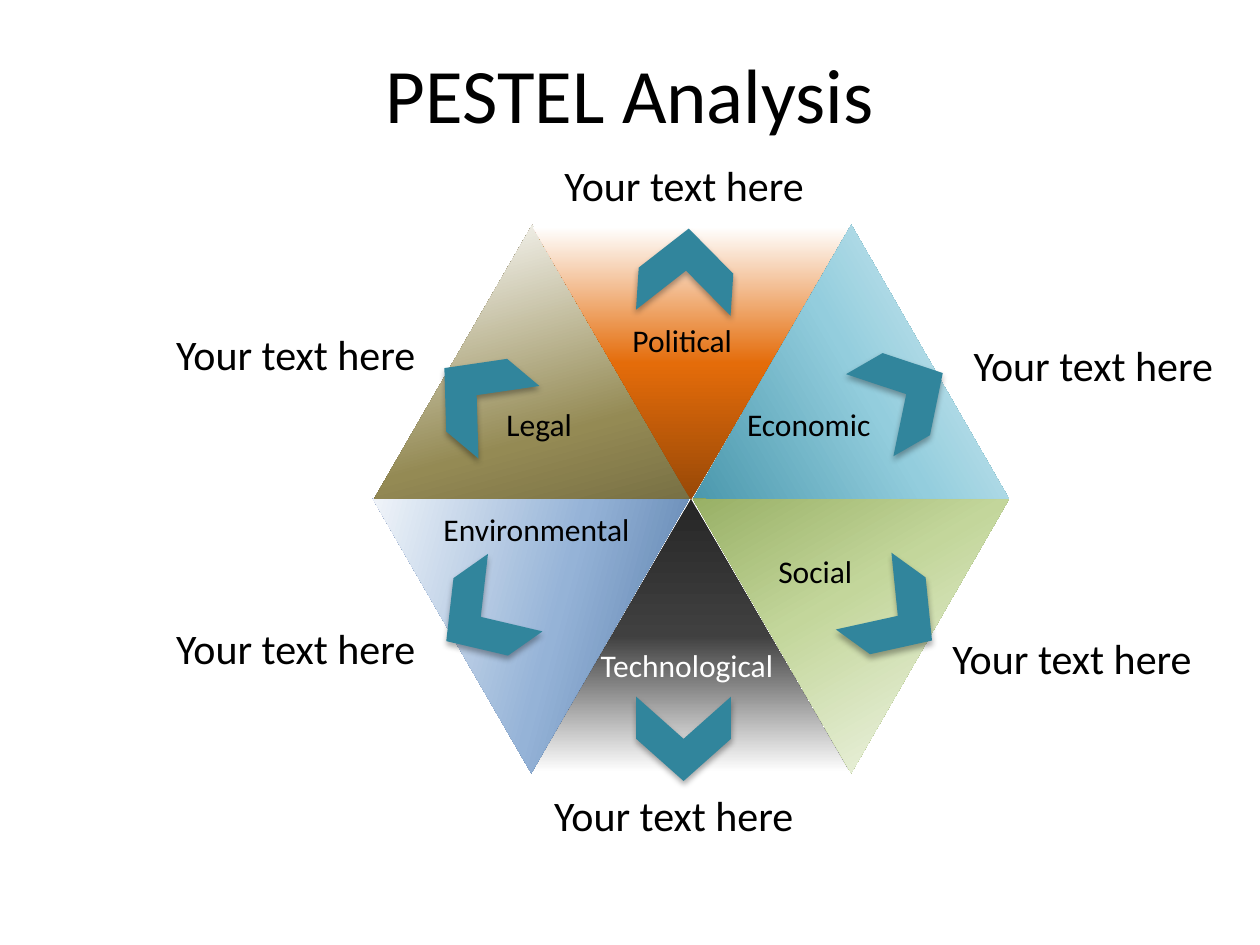
from copy import deepcopy
from dataclasses import dataclass

from pptx import Presentation
from pptx.dml.color import RGBColor
from pptx.enum.shapes import MSO_SHAPE
from pptx.enum.text import MSO_ANCHOR, MSO_AUTO_SIZE, PP_ALIGN
from pptx.oxml import parse_xml
from pptx.oxml.ns import nsdecls, qn
from pptx.shapes.autoshape import Shape
from pptx.shapes.shapetree import GroupShapes, SlideShapes
from pptx.text.text import _Paragraph
from pptx.util import Cm, Pt

FONT = "Calibri"
BLACK = RGBColor(0x00, 0x00, 0x00)
WHITE = RGBColor(0xFF, 0xFF, 0xFF)
TEAL = RGBColor(0x31, 0x85, 0x9C)
CHARCOAL = RGBColor(0x26, 0x26, 0x26)
GREY = RGBColor(0x40, 0x40, 0x40)
DARK_BLUE = RGBColor(0x37, 0x60, 0x92)
LIGHT_BLUE = RGBColor(0x95, 0xB3, 0xD7)
DARK_TAN = RGBColor(0x4A, 0x45, 0x2A)
TAN = RGBColor(0x94, 0x8A, 0x54)
BROWN = RGBColor(0x98, 0x48, 0x07)
ORANGE = RGBColor(0xE4, 0x6C, 0x0A)
AQUA = RGBColor(0x93, 0xCD, 0xDD)
DARK_GREEN = RGBColor(0x77, 0x93, 0x3C)
LIGHT_GREEN = RGBColor(0xC3, 0xD6, 0x9B)

TRIANGLE_SIZE = (6.38, 5.51)
CHEVRON_SIZE = (1.7, 1.91)
CAPTION_SIZE = (5.38, 1.27)
LABEL_HEIGHT = 1.02
CAPTION_TEXT = "Your text here"


@dataclass(frozen=True)
class Triangle:
    left: float
    top: float
    rotation: float
    dark: RGBColor
    middle: RGBColor
    angle: float
    flipped: bool = False


@dataclass(frozen=True)
class Chevron:
    left: float
    top: float
    rotation: float


@dataclass(frozen=True)
class TextItem:
    text: str
    left: float
    top: float
    width: float
    height: float
    size: float
    color: RGBColor = BLACK


TRIANGLES = [
    Triangle(10.74, 10.06, 0, CHARCOAL, GREY, 90),
    Triangle(8.31, 8.69, 60, DARK_BLUE, LIGHT_BLUE, 135),
    Triangle(8.33, 5.92, 120, DARK_TAN, TAN, 135),
    Triangle(10.74, 4.57, 0, BROWN, ORANGE, 90, flipped=True),
    Triangle(14.76, 5.92, 120, TEAL, AQUA, 210),
    Triangle(14.76, 8.69, 60, DARK_GREEN, LIGHT_GREEN, 0),
]

CHEVRONS = [
    Chevron(17.42, 6.99, 330),
    Chevron(8.76, 7.01, 220),
    Chevron(8.84, 11.48, 144.9),
    Chevron(12.93, 13.94, 90),
    Chevron(17.25, 11.46, 35.9),
    Chevron(12.98, 4.5, 273.7),
]

CAPTION_POSITIONS = [
    (11.13, 3.1),
    (19.38, 6.71),
    (18.95, 12.62),
    (10.92, 15.8),
    (3.3, 12.42),
    (3.3, 6.5),
]

LABELS = [
    TextItem("Political", 12.5, 6.35, 2.54, LABEL_HEIGHT, 18),
    TextItem("Economic", 14.81, 8.05, 3.02, LABEL_HEIGHT, 18),
    TextItem("Social", 15.44, 11, 2.01, LABEL_HEIGHT, 18),
    TextItem("Technological", 11.86, 12.9, 4.04, LABEL_HEIGHT, 18, WHITE),
    TextItem("Environmental", 8.69, 10.16, 4.29, LABEL_HEIGHT, 18),
    TextItem("Legal", 9.96, 8.05, 1.85, LABEL_HEIGHT, 18),
]


def add_run(paragraph: _Paragraph, text: str, size: float, color: RGBColor) -> None:
    run = paragraph.add_run()
    run.text = text
    run.font.name = FONT
    run.font.size = Pt(size)
    run.font.color.rgb = color


def fill_gradient(shape: Shape, colors: list[RGBColor], angle: float) -> None:
    shape.fill.gradient()
    stop_list = shape._element.spPr.find(qn("a:gradFill")).find(qn("a:gsLst"))
    stop_list.append(deepcopy(stop_list[0]))
    for stop, color, position in zip(shape.fill.gradient_stops, colors, (0, 0.5, 1)):
        stop.color.rgb = color
        stop.position = position
    shape.fill.gradient_angle = (360 - angle) % 360


def add_triangle(shapes: GroupShapes, triangle: Triangle) -> None:
    width, height = TRIANGLE_SIZE
    shape = shapes.add_shape(
        MSO_SHAPE.ISOSCELES_TRIANGLE,
        Cm(triangle.left), Cm(triangle.top), Cm(width), Cm(height),
    )
    shape.rotation = triangle.rotation
    if triangle.flipped:
        shape._element.spPr.xfrm.set("flipV", "1")
    fill_gradient(shape, [triangle.dark, triangle.middle, WHITE], triangle.angle)
    shape.line.fill.background()
    shape.shadow.inherit = False


def add_chevron(shapes: SlideShapes, chevron: Chevron) -> None:
    width, height = CHEVRON_SIZE
    shape = shapes.add_shape(
        MSO_SHAPE.CHEVRON,
        Cm(chevron.left), Cm(chevron.top), Cm(width), Cm(height),
    )
    shape.rotation = chevron.rotation
    shape.fill.solid()
    shape.fill.fore_color.rgb = TEAL
    shape.line.fill.background()
    shape.shadow.inherit = False
    effects = shape._element.spPr.find(qn("a:effectLst"))
    effects.append(parse_xml(
        f'<a:outerShdw {nsdecls("a")} blurRad="{Pt(3.5)}" dist="{Pt(2.2)}" '
        'dir="5400000" algn="ctr" rotWithShape="0">'
        '<a:srgbClr val="000000"><a:alpha val="32000"/></a:srgbClr></a:outerShdw>'
    ))


def add_text(shapes: SlideShapes, item: TextItem) -> None:
    box = shapes.add_textbox(
        Cm(item.left), Cm(item.top), Cm(item.width), Cm(item.height)
    )
    box.text_frame.word_wrap = False
    box.text_frame.auto_size = MSO_AUTO_SIZE.SHAPE_TO_FIT_TEXT
    add_run(box.text_frame.paragraphs[0], item.text, item.size, item.color)


def format_title(title: Shape, text: str) -> None:
    title.left, title.top = Cm(1.27), Cm(0.76)
    title.width, title.height = Cm(22.86), Cm(2.21)
    title.text_frame.vertical_anchor = MSO_ANCHOR.MIDDLE
    paragraph = title.text_frame.paragraphs[0]
    paragraph.alignment = PP_ALIGN.CENTER
    add_run(paragraph, text, 44, BLACK)


def main() -> None:
    presentation = Presentation()
    presentation.slide_width, presentation.slide_height = Cm(25.4), Cm(19.05)
    slide = presentation.slides.add_slide(presentation.slide_layouts[5])
    format_title(slide.shapes.title, "PESTEL Analysis")

    hexagon = slide.shapes.add_group_shape()
    for triangle in TRIANGLES:
        add_triangle(hexagon.shapes, triangle)
    for chevron in CHEVRONS:
        add_chevron(slide.shapes, chevron)
    captions = [
        TextItem(CAPTION_TEXT, left, top, *CAPTION_SIZE, 24)
        for left, top in CAPTION_POSITIONS
    ]
    for item in captions + LABELS:
        add_text(slide.shapes, item)

    presentation.save("out.pptx")


if __name__ == "__main__":
    main()
